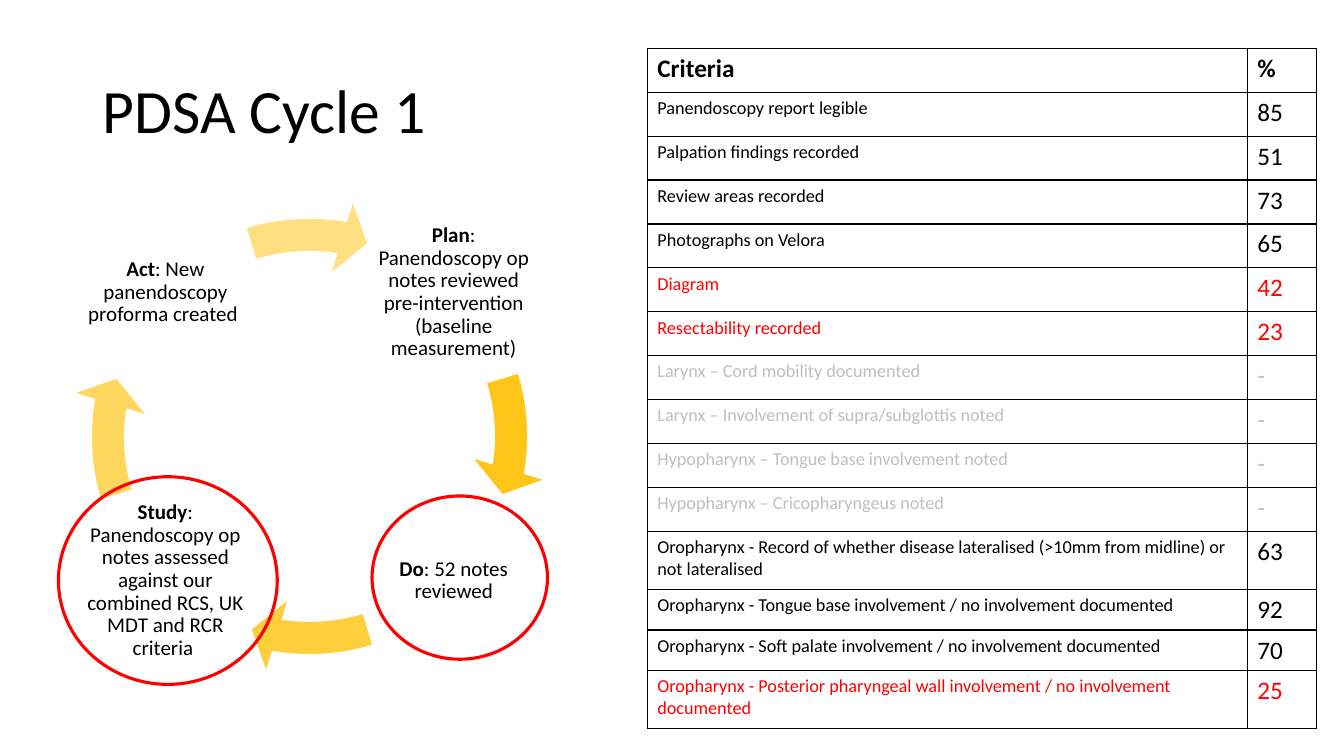
from lxml import etree
from pptx import Presentation
from pptx.dml.color import RGBColor
from pptx.enum.shapes import MSO_SHAPE as Shape
from pptx.enum.text import MSO_ANCHOR as Anchor, PP_ALIGN as Align
from pptx.oxml.ns import qn
from pptx.util import Inches, Pt

# Content
FONT = "Calibri"
BLACK, RED, GREY, AMBER, WHITE = "000000", "FF0000", "BFBFBF", "FFC000", "FFFFFF"
TITLE = "PDSA Cycle 1"

# Clockwise from top right: step, description, (column, row), arrow opacity in %
STEPS = [
    ("Plan", ": Panendoscopy op notes reviewed pre-intervention (baseline measurement)", (1, 0), 90),
    ("Do", ": 52 notes reviewed", (1, 1), 77),
    ("Study", ": Panendoscopy op notes assessed against our combined RCS, UK MDT and RCR criteria ", (0, 1), 63),
    ("Act", ": New panendoscopy proforma created ", (0, 0), 50),
]
HIGHLIGHTS = [(0.58, 4.73, 2.17, 2.06), (3.69, 4.92, 1.74, 1.62)]

CRITERIA = [
    ("Criteria", "%", BLACK),
    ("Panendoscopy report legible", "85", BLACK),
    ("Palpation findings recorded", "51", BLACK),
    ("Review areas recorded", "73", BLACK),
    ("Photographs on Velora", "65", BLACK),
    ("Diagram", "42", RED),
    ("Resectability recorded", "23", RED),
    ("Larynx – Cord mobility documented", "-", GREY),
    ("Larynx – Involvement of supra/subglottis noted", "-", GREY),
    ("Hypopharynx – Tongue base involvement noted", "-", GREY),
    ("Hypopharynx – Cricopharyngeus noted", "-", GREY),
    ("Oropharynx - Record of whether disease lateralised (>10mm from midline) or not lateralised", "63", BLACK),
    ("Oropharynx - Tongue base involvement / no involvement documented", "92", BLACK),
    ("Oropharynx - Soft palate involvement / no involvement documented", "70", BLACK),
    ("Oropharynx - Posterior pharyngeal wall involvement / no involvement documented", "25", RED),
]
COLUMN_WIDTHS = (5.95, 0.69)
TABLE_HEIGHT = 6.75
SPECIAL_HEIGHTS = {11: 0.58, 12: 0.4, 13: 0.4, 14: 0.58}


# Helpers
def colour(value):
    return RGBColor.from_string(value)


def inches(*lengths):
    return [Inches(length) for length in lengths]


def set_all(target, values):
    for name, value in values.items():
        setattr(target, name, value)


def write(paragraph, words, size, shade=BLACK, bold=False):
    run = paragraph.add_run()
    run.text = words
    set_all(run.font, {"name": FONT, "size": Pt(size), "bold": bold})
    run.font.color.rgb = colour(shade)


def add_text(box, inset, align):
    frame = slide.shapes.add_textbox(*inches(*box)).text_frame
    set_all(frame, {"word_wrap": True, "vertical_anchor": Anchor.MIDDLE})
    if inset is not None:
        sides = ("left", "right", "top", "bottom")
        set_all(frame, {f"margin_{side}": Inches(inset) for side in sides})
    paragraph = frame.paragraphs[0]
    set_all(paragraph, {"alignment": align, "line_spacing": 0.9})
    return paragraph


def add_outlined(preset, box, line_colour, line_width):
    shape = slide.shapes.add_shape(preset, *inches(*box))
    shape.shadow.inherit = False
    shape.line.color.rgb = colour(line_colour)
    shape.line.width = Pt(line_width)
    return shape


def add_borders(cell):
    properties = cell._tc.get_or_add_tcPr()
    for index, side in enumerate(("lnL", "lnR", "lnT", "lnB")):
        line = etree.Element(qn(f"a:{side}"), w=str(Pt(1)))
        fill = etree.SubElement(line, qn("a:solidFill"))
        etree.SubElement(fill, qn("a:srgbClr"), val=BLACK)
        properties.insert(index, line)


presentation = Presentation()
set_all(presentation, {"slide_width": Inches(13.33), "slide_height": Inches(7.5)})
slide = presentation.slides.add_slide(presentation.slide_layouts[6])

# Title
write(add_text((0.92, 0.4, 11.5, 1.45), None, Align.LEFT), TITLE, 44)

# Cycle: each arrow is turned a quarter (54 adjustment units) from the one before
QUARTER, FULL_TURN = 54, 216
for index, (step, description, (column, row), opacity) in enumerate(STEPS):
    label = add_text((0.8 + 2.86 * column, 2.06 + 2.86 * row, 1.68, 1.68), 0.02, Align.CENTER)
    write(label, step, 15, bold=True)
    write(label, description, 15)

    arrow = add_outlined(Shape.CIRCULAR_ARROW, (0.69, 1.95, 4.76, 4.76), WHITE, 1)
    turn = QUARTER * index
    shape_values = (0.07, 4.65, 5.5 + turn, (205.85 + turn) % FULL_TURN, 0.08)
    for position, value in enumerate(shape_values):
        arrow.adjustments[position] = value
    arrow.fill.solid()
    arrow.fill.fore_color.rgb = colour(AMBER)
    amber = arrow._element.spPr.find(f"{qn('a:solidFill')}/{qn('a:srgbClr')}")
    etree.SubElement(amber, qn("a:alpha"), val=str(opacity * 1000))

# Criteria table
table = slide.shapes.add_table(
    len(CRITERIA), len(COLUMN_WIDTHS), *inches(6.42, 0.48, sum(COLUMN_WIDTHS), TABLE_HEIGHT)
).table
set_all(table, {"first_row": False, "horz_banding": False})
for column, width in zip(table.columns, COLUMN_WIDTHS):
    column.width = Inches(width)
usual_height = (TABLE_HEIGHT - sum(SPECIAL_HEIGHTS.values())) / (len(CRITERIA) - len(SPECIAL_HEIGHTS))
for index, (criterion, percent, shade) in enumerate(CRITERIA):
    table.rows[index].height = Inches(SPECIAL_HEIGHTS.get(index, usual_height))
    header = index == 0
    for column, (words, size) in enumerate(((criterion, 18 if header else 13), (percent, 18))):
        cell = table.cell(index, column)
        cell.fill.background()
        add_borders(cell)
        write(cell.text_frame.paragraphs[0], words, size, shade, header)

# Red rings around Study and Do
for box in HIGHLIGHTS:
    add_outlined(Shape.OVAL, box, RED, 2.25).fill.background()

presentation.save("out.pptx")
